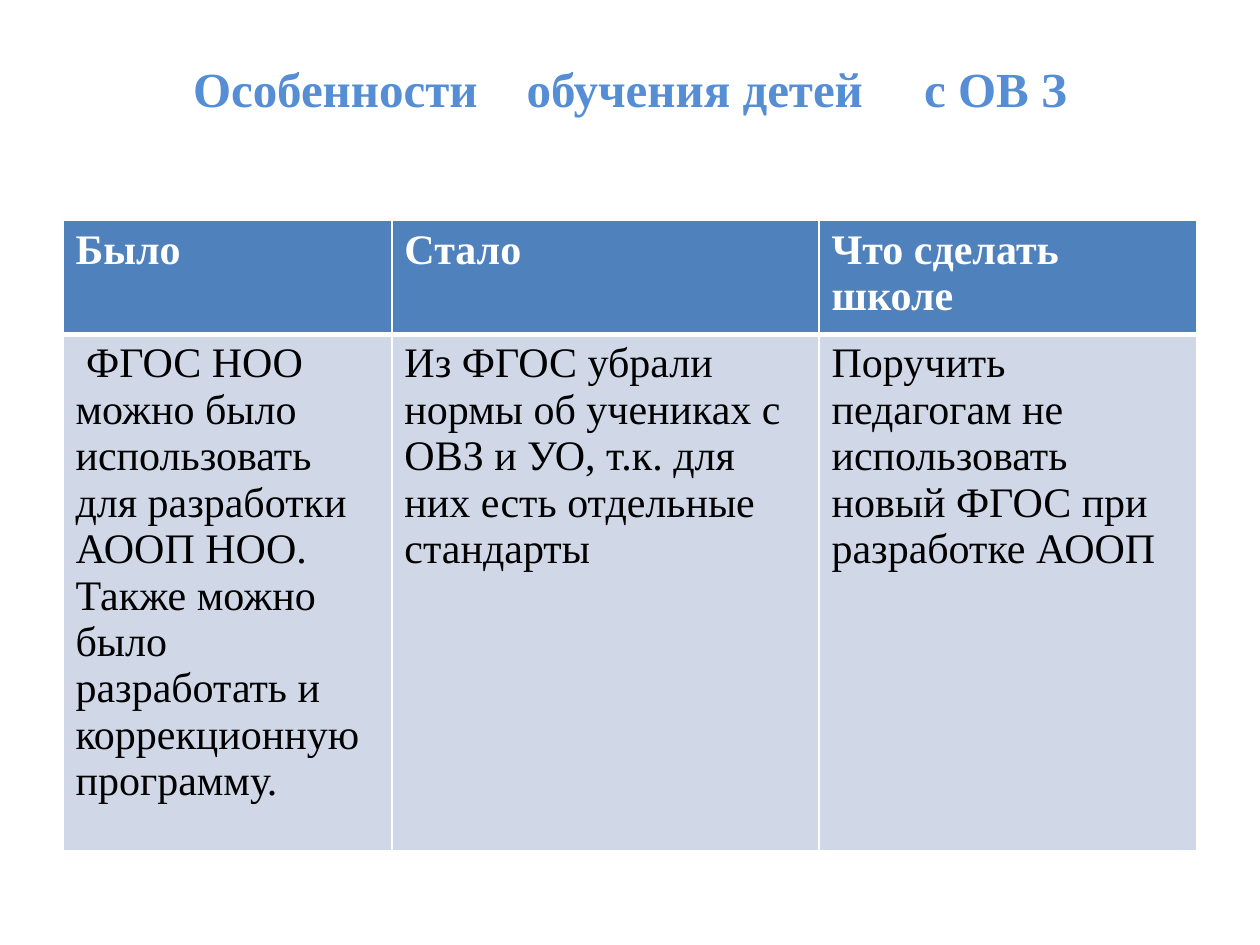
from typing import NamedTuple

from lxml.etree import SubElement
from pptx import Presentation
from pptx.dml.color import RGBColor as RGB
from pptx.enum.text import MSO_ANCHOR as Anchor, PP_ALIGN as Align
from pptx.oxml.ns import qn
from pptx.util import Cm, Pt

FONT = "Times New Roman"
SKY = RGB(0x55, 0x8E, 0xD5)
BLUE = RGB(0x4F, 0x81, 0xBD)
PALE = RGB(0xD0, 0xD8, 0xE8)
WHITE = RGB(0xFF, 0xFF, 0xFF)
BLACK = RGB(0, 0, 0)

LEFT, WIDTH = Cm(1.27), Cm(22.86)


class Column(NamedTuple):
    width: float
    head: str
    body: str
    indent: int = 0


class Band(NamedTuple):
    """Look of one table row; top and base are its border widths in points."""
    height: float
    fill: RGB
    color: RGB
    bold: bool
    top: int
    base: int


COLUMNS = [
    Column(6.63, "Было",
           "ФГОС НОО можно было использовать для разработки АООП НОО. "
           "Также можно было разработать и коррекционную программу.", 6),
    Column(8.61, "Стало",
           "Из ФГОС убрали нормы об учениках с ОВЗ и УО, т.к. для них есть "
           "отдельные стандарты"),
    Column(7.62, "Что сделать школе",
           "Поручить педагогам не использовать новый ФГОС при разработке АООП"),
]
HEAD = Band(2.1, BLUE, WHITE, True, 1, 3)
BODY = Band(9.6, PALE, BLACK, False, 3, 1)


def write(par, text: str, *, size: int, color: RGB, bold: bool = False,
          space: int = 0) -> None:
    """Add a run; space is extra points after each character."""
    run = par.add_run()
    run.text = text
    font = run.font
    font.name, font.size, font.bold = FONT, Pt(size), bold
    font.color.rgb = color
    if space:
        font._element.set("spc", str(space * 100))


def add_title(slide) -> None:
    box = slide.shapes.add_textbox(LEFT, Cm(0.76), WIDTH, Cm(3.18))
    frame = box.text_frame
    frame.word_wrap = True
    frame.vertical_anchor = Anchor.MIDDLE
    frame.margin_bottom = Cm(1.27)
    par = frame.paragraphs[0]
    par.alignment = Align.CENTER
    parts = [("Особенности", 0), (" ", 21), ("обучения детей", 0),
             (" ", 28), ("с ОВ З", 0)]
    for text, space in parts:
        write(par, text, size=28, color=SKY, bold=True, space=space)


def add_borders(cell, top: int, base: int) -> None:
    props = cell._tc.get_or_add_tcPr()
    for side, width in (("L", 1), ("R", 1), ("T", top), ("B", base)):
        line = SubElement(props, qn(f"a:ln{side}"), w=str(Pt(width)))
        fill = SubElement(line, qn("a:solidFill"))
        SubElement(fill, qn("a:srgbClr"), val=str(WHITE))


def fill_cell(cell, text: str, band: Band, indent: int = 0) -> None:
    add_borders(cell, band.top, band.base)
    cell.fill.solid()
    cell.fill.fore_color.rgb = band.fill
    par = cell.text_frame.paragraphs[0]
    if indent:
        par._p.get_or_add_pPr().set("indent", str(Pt(indent)))
    write(par, text, size=24, color=band.color, bold=band.bold)


def add_grid(slide) -> None:
    bands = (HEAD, BODY)
    height = Cm(sum(band.height for band in bands))
    table = slide.shapes.add_table(len(bands), len(COLUMNS), LEFT, Cm(4.45),
                                   WIDTH, height).table
    for row, band in zip(table.rows, bands):
        row.height = Cm(band.height)
    for num, col in enumerate(COLUMNS):
        table.columns[num].width = Cm(col.width)
        fill_cell(table.cell(0, num), col.head, HEAD)
        fill_cell(table.cell(1, num), col.body, BODY, col.indent)


def main() -> None:
    deck = Presentation()
    deck.slide_width, deck.slide_height = Cm(25.4), Cm(19.05)
    slide = deck.slides.add_slide(deck.slide_layouts[6])
    add_title(slide)
    add_grid(slide)
    deck.save("out.pptx")


if __name__ == "__main__":
    main()
